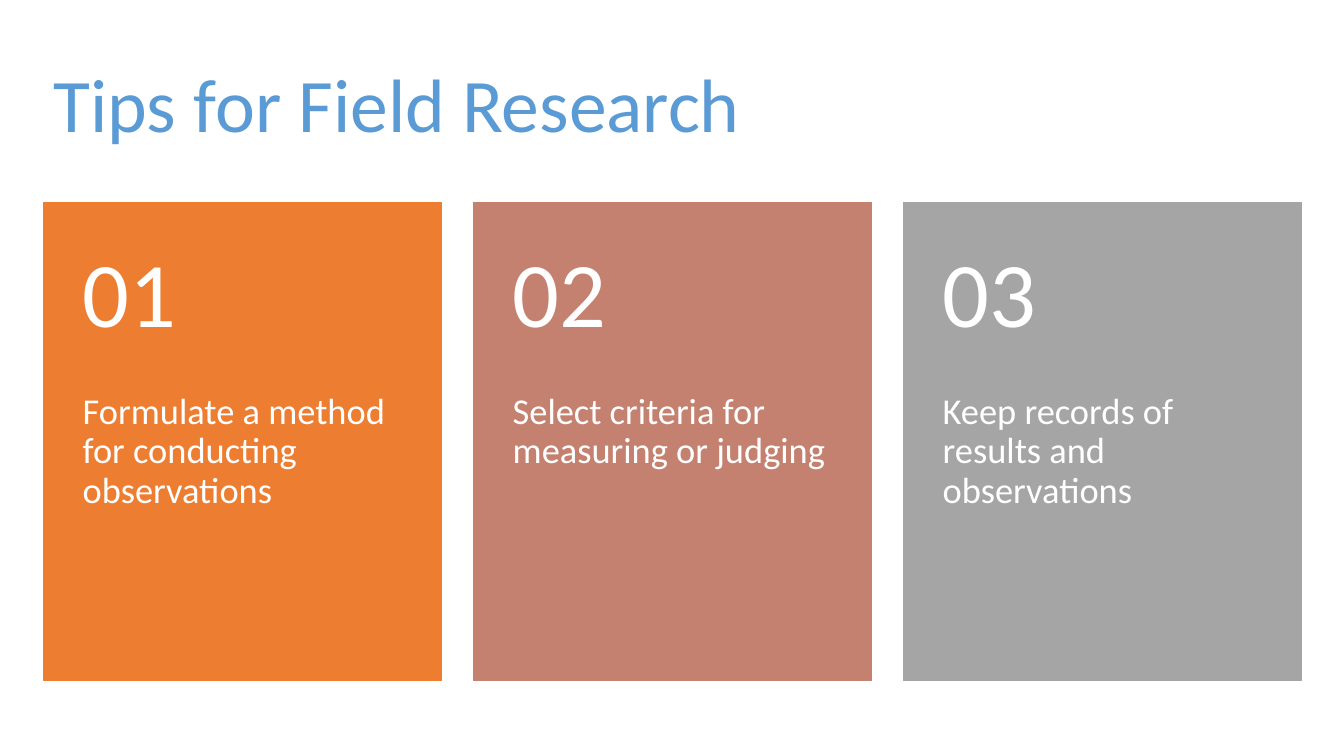
from dataclasses import dataclass

from pptx import Presentation
from pptx.dml.color import RGBColor
from pptx.enum.shapes import MSO_SHAPE
from pptx.enum.text import MSO_ANCHOR, MSO_AUTO_SIZE, PP_ALIGN
from pptx.util import Inches, Pt


@dataclass(frozen=True)
class Theme:
    font: str = "Calibri"
    title_color: str = "5B9BD5"
    card_text: str = "FFFFFF"
    card_fills: tuple = ("ED7D31", "C48170", "A5A5A5")
    title_size: int = 54
    number_size: int = 66
    body_size: int = 26


class SlideBuilder:
    def __init__(self, prs, theme):
        self.theme = theme
        self.s = prs.slides.add_slide(prs.slide_layouts[5])  # title only

    def set_text(self, tf, text, size, color, anchor):
        tf.word_wrap = True
        tf.auto_size = MSO_AUTO_SIZE.NONE
        tf.vertical_anchor = anchor
        p = tf.paragraphs[0]
        p.text = text
        p.alignment = PP_ALIGN.LEFT
        p.line_spacing = 0.9
        p.font.name = self.theme.font
        p.font.size = Pt(size)
        p.font.color.rgb = RGBColor.from_string(color)

    def title(self, text, x, y, w, h):
        sp = self.s.shapes.title
        sp.left, sp.top, sp.width, sp.height = map(Inches, (x, y, w, h))
        self.set_text(sp.text_frame, text, self.theme.title_size,
                      self.theme.title_color, MSO_ANCHOR.MIDDLE)

    def panel(self, group, color, x, y, w, h):
        sp = group.shapes.add_shape(MSO_SHAPE.RECTANGLE, *map(Inches, (x, y, w, h)))
        sp.shadow.inherit = False
        sp.fill.solid()
        sp.fill.fore_color.rgb = RGBColor.from_string(color)
        sp.line.color.rgb = RGBColor.from_string(color)
        sp.line.width = Pt(1)

    def label(self, group, text, size, x, y, w, h, top, bottom, anchor):
        tf = group.shapes.add_textbox(*map(Inches, (x, y, w, h))).text_frame
        tf.margin_left = tf.margin_right = Inches(0.39)
        tf.margin_top, tf.margin_bottom = Inches(top), Inches(bottom)
        self.set_text(tf, text, size, self.theme.card_text, anchor)

    def card(self, number, text, color, x, y, w, h, head_h):
        group = self.s.shapes.add_group_shape()
        self.panel(group, color, x, y, w, h)
        self.label(group, text, self.theme.body_size, x, y + head_h, w, h - head_h,
                   0, 0.36, MSO_ANCHOR.TOP)
        self.label(group, f"{number:02d}", self.theme.number_size, x, y, w, head_h,
                   0.18, 0.18, MSO_ANCHOR.MIDDLE)


def main():
    prs = Presentation()
    prs.slide_width, prs.slide_height = Inches(13.33), Inches(7.5)
    theme = Theme()
    slide = SlideBuilder(prs, theme)

    # Title
    left, width = 0.43, 12.48
    slide.title("Tips for Field Research", left, 0.35, width, 1.45)

    # Three numbered cards, spread evenly across the title's width
    tips = ("Formulate a method for conducting observations",
            "Select criteria for measuring or judging",
            "Keep records of results and observations")
    card_w = 3.95
    pitch = (width - card_w) / (len(tips) - 1)
    for i, (tip, fill) in enumerate(zip(tips, theme.card_fills)):
        slide.card(i + 1, tip, fill, left + i * pitch, 2.01, card_w, 4.74, 1.89)

    prs.save("out.pptx")


if __name__ == "__main__":
    main()
